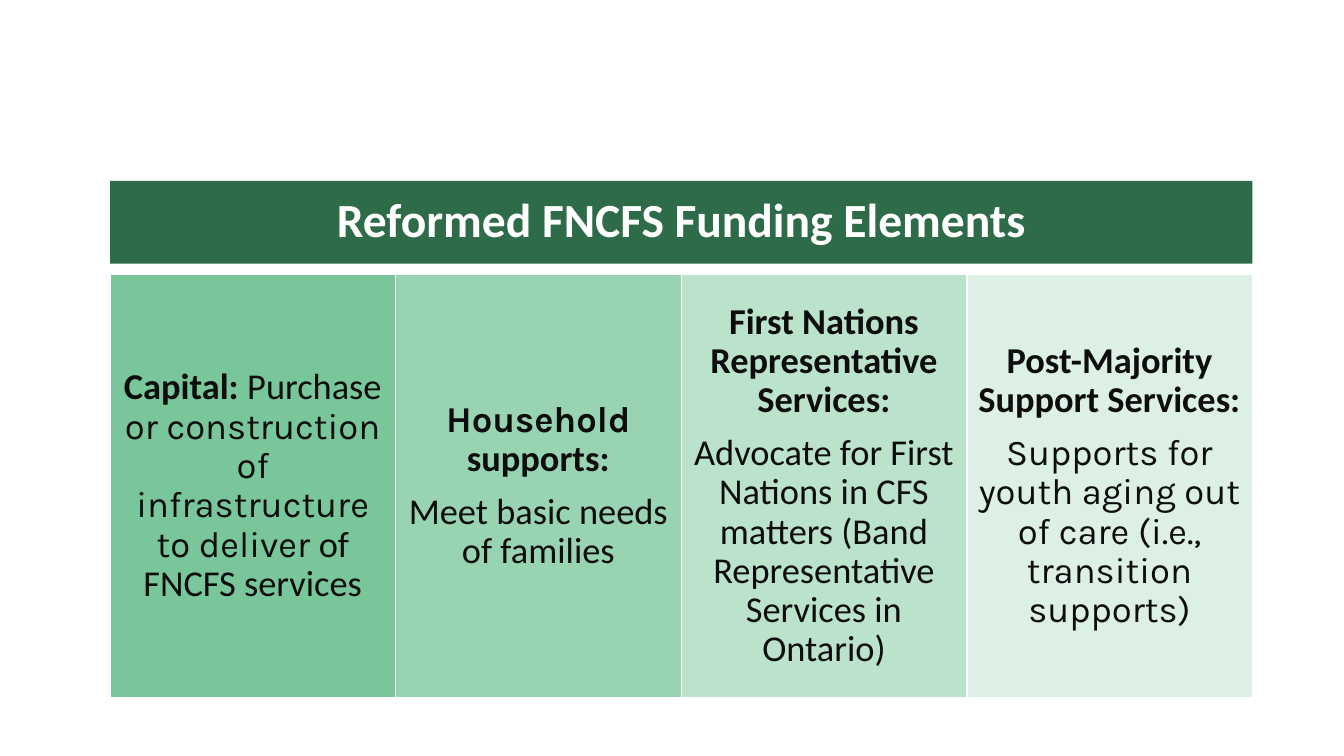
from lxml import etree
from pptx import Presentation
from pptx.dml.color import RGBColor
from pptx.enum.shapes import MSO_SHAPE
from pptx.enum.text import MSO_ANCHOR, MSO_AUTO_SIZE, PP_ALIGN
from pptx.oxml.ns import qn
from pptx.util import Pt

RECTANGLE = MSO_SHAPE.RECTANGLE
MIDDLE = MSO_ANCHOR.MIDDLE
NO_AUTOFIT = MSO_AUTO_SIZE.NONE
CENTER = PP_ALIGN.CENTER

BODY_FONT, ACCENT_FONT = "Calibri", "Karla"
WHITE, INK, DARK_GREEN, GREEN = "FFFFFF", "0D0D0D", "2E6C49", "78C699"

HEADING = "Reformed FNCFS Funding Elements"
# Each element is a list of paragraphs; each run is (text, font, bold).
ELEMENTS = [
    [[("Capital:", BODY_FONT, True),
      (" Purchase", BODY_FONT, False),
      (" or construction of infrastructure to deliver", ACCENT_FONT, False),
      (" of FNCFS services", BODY_FONT, False)]],
    [[("Household", ACCENT_FONT, True), (" supports:", BODY_FONT, True)],
     [("Meet basic needs of families", BODY_FONT, False)]],
    [[("First Nations Representative Services:", BODY_FONT, True)],
     [("Advocate for First Nations in CFS matters "
       "(Band Representative Services in Ontario)", BODY_FONT, False)]],
    [[("Post-Majority Support Services:", BODY_FONT, True)],
     [("Supports for youth aging out of care (i.e., transition supports)",
       ACCENT_FONT, False)]],
]

LEFT, WIDTH = 78.6, 816
HEADING_TOP, HEADING_HEIGHT = 129.2, 59.2
PANEL_TOP, PANEL_HEIGHT = 196.2, 302.4
PANEL_WIDTH = WIDTH / len(ELEMENTS)


def rgb(color):
    return RGBColor.from_string(color)


def fill_solid(shape, color, opacity=100):
    shape.fill.solid()
    shape.fill.fore_color.rgb = rgb(color)
    if opacity < 100:
        srgb = shape.fill._xPr.find(f".//{qn('a:srgbClr')}")
        etree.SubElement(srgb, qn("a:alpha"), val=str(opacity * 1000))


def write(shape, paragraphs, size, color, inset):
    frame = shape.text_frame
    frame.word_wrap = True
    frame.auto_size = NO_AUTOFIT
    frame.vertical_anchor = MIDDLE
    frame.margin_left = frame.margin_right = Pt(inset)
    frame.margin_top = frame.margin_bottom = Pt(inset)
    for index, runs in enumerate(paragraphs):
        paragraph = frame.add_paragraph() if index else frame.paragraphs[0]
        paragraph.alignment = CENTER
        paragraph.line_spacing = 0.9
        paragraph.space_before = Pt(9.4 if index else 0)
        for text, font, bold in runs:
            run = paragraph.add_run()
            run.text = text
            run.font.name = font
            run.font.size = Pt(size)
            run.font.bold = bold
            run.font.color.rgb = rgb(color)


prs = Presentation()
prs.slide_width, prs.slide_height = Pt(960), Pt(540)
slide = prs.slides.add_slide(prs.slide_layouts[5])

heading = slide.shapes.title
heading.left, heading.top = Pt(LEFT), Pt(HEADING_TOP)
heading.width, heading.height = Pt(WIDTH), Pt(HEADING_HEIGHT)
fill_solid(heading, DARK_GREEN)
write(heading, [[(HEADING, BODY_FONT, True)]], 34, WHITE, 10)

for column, paragraphs in enumerate(ELEMENTS):
    panel = slide.shapes.add_shape(
        RECTANGLE, Pt(LEFT + column * PANEL_WIDTH), Pt(PANEL_TOP),
        Pt(PANEL_WIDTH), Pt(PANEL_HEIGHT))
    panel.shadow.inherit = False
    fill_solid(panel, GREEN, 100 - 25 * column)
    panel.line.color.rgb = rgb(WHITE)
    panel.line.width = Pt(1)
    write(panel, paragraphs, 26, INK, 7.8)

prs.save("out.pptx")
